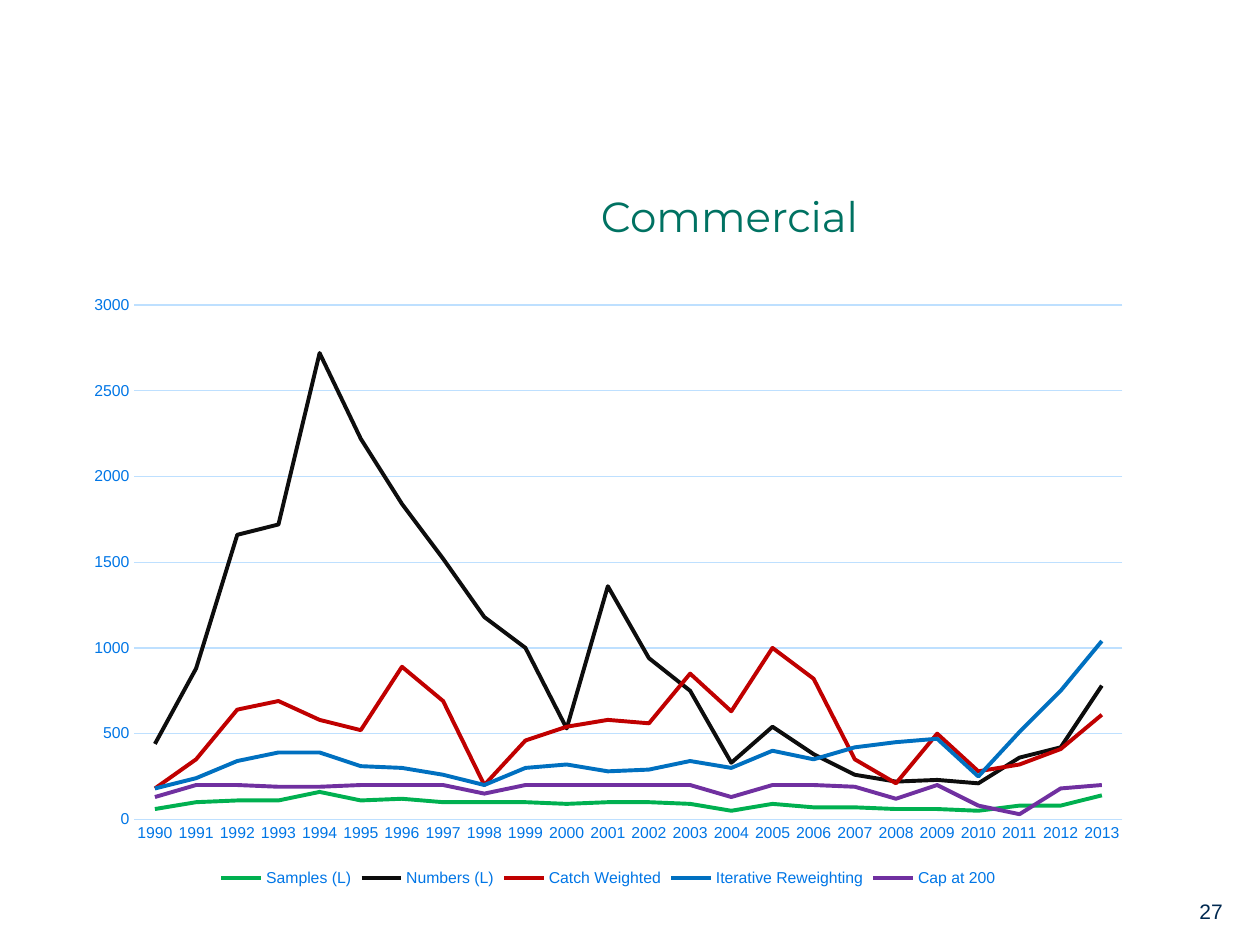
from pptx import Presentation
from pptx.chart.data import CategoryChartData
from pptx.dml.color import RGBColor
from pptx.enum.chart import XL_CHART_TYPE, XL_LEGEND_POSITION, XL_MARKER_STYLE, XL_TICK_MARK
from pptx.enum.text import MSO_ANCHOR, PP_ALIGN
from pptx.util import Cm, Pt

COLORS = {
    "title": "007262", "number": "002950", "label": "0076E6", "grid": "BEE0FF",
    "Samples (L)": "00B050", "Numbers (L)": "0D0D0D", "Catch Weighted": "C00000",
    "Iterative Reweighting": "0070C0", "Cap at 200": "7030A0",
}
YEARS = [str(year) for year in range(1990, 2014)]
SERIES = {
    "Samples (L)": [60, 100, 110, 110, 160, 110, 120, 100, 100, 100, 90, 100,
                    100, 90, 50, 90, 70, 70, 60, 60, 50, 80, 80, 140],
    "Numbers (L)": [440, 880, 1660, 1720, 2720, 2220, 1840, 1520, 1180, 1000, 530, 1360,
                    940, 750, 330, 540, 380, 260, 220, 230, 210, 360, 420, 780],
    "Catch Weighted": [180, 350, 640, 690, 580, 520, 890, 690, 200, 460, 540, 580,
                       560, 850, 630, 1000, 820, 350, 210, 500, 280, 320, 410, 610],
    "Iterative Reweighting": [180, 240, 340, 390, 390, 310, 300, 260, 200, 300, 320, 280,
                              290, 340, 300, 400, 350, 420, 450, 470, 250, 510, 750, 1040],
    "Cap at 200": [130, 200, 200, 190, 190, 200, 200, 200, 150, 200, 200, 200,
                   200, 200, 130, 200, 200, 190, 120, 200, 80, 30, 180, 200],
}


class Deck:
    """Holds the style and the current slide, and adds elements to it."""

    def __init__(self):
        self.prs = Presentation()
        self.prs.slide_width, self.prs.slide_height = Cm(25.4), Cm(19.05)
        self.s = self.prs.slides.add_slide(self.prs.slide_layouts[6])

    def font(self, font, size, color, name="Arial"):
        font.name, font.size = name, Pt(size)
        font.color.rgb = RGBColor.from_string(COLORS[color])

    def line(self, fmt, color, width):
        fmt.line.color.rgb = RGBColor.from_string(COLORS[color])
        fmt.line.width = Pt(width)

    def text(self, box, text, size, color, name="Arial",
             align=PP_ALIGN.LEFT, anchor=MSO_ANCHOR.TOP):
        tf = self.s.shapes.add_textbox(*map(Cm, box)).text_frame
        tf.word_wrap = True
        tf.vertical_anchor = anchor
        tf.text = text
        p = tf.paragraphs[0]
        p.alignment = align
        for r in p.runs:
            self.font(r.font, size, color, name)

    def line_chart(self, box, categories, series):
        data = CategoryChartData()
        data.categories = categories
        for name, values in series.items():
            data.add_series(name, values)
        chart = self.s.shapes.add_chart(XL_CHART_TYPE.LINE, *map(Cm, box), data).chart
        self.font(chart.font, 10, "number")
        chart.has_title = False
        chart.has_legend = True
        chart.legend.position = XL_LEGEND_POSITION.BOTTOM
        chart.legend.include_in_layout = False
        self.font(chart.legend.font, 9, "label")
        for axis in (chart.category_axis, chart.value_axis):
            axis.major_tick_mark = axis.minor_tick_mark = XL_TICK_MARK.NONE
            self.font(axis.tick_labels.font, 9, "label")
        self.line(chart.category_axis.format, "grid", 0.75)
        values = chart.value_axis
        values.minimum_scale, values.maximum_scale, values.major_unit = 0, 3000, 500
        values.format.line.fill.background()
        values.has_major_gridlines = True
        self.line(values.major_gridlines.format, "grid", 0.75)
        plot = chart.plots[0]
        plot.vary_by_categories = False
        for ser in plot.series:
            ser.smooth = False
            ser.marker.style = XL_MARKER_STYLE.NONE
            self.line(ser.format, ser.name, 2.25)


def main():
    deck = Deck()
    deck.text((23.93, 17.98, 2.11, 0.76), "27", 12, "number")
    deck.text((6.35, 3.18, 16.71, 2.34), "Commercial", 24, "title", "Montserrat",
              PP_ALIGN.CENTER, MSO_ANCHOR.MIDDLE)
    deck.line_chart((1.47, 5.72, 21.59, 12.27), YEARS, SERIES)
    deck.prs.save("out.pptx")


if __name__ == "__main__":
    main()
